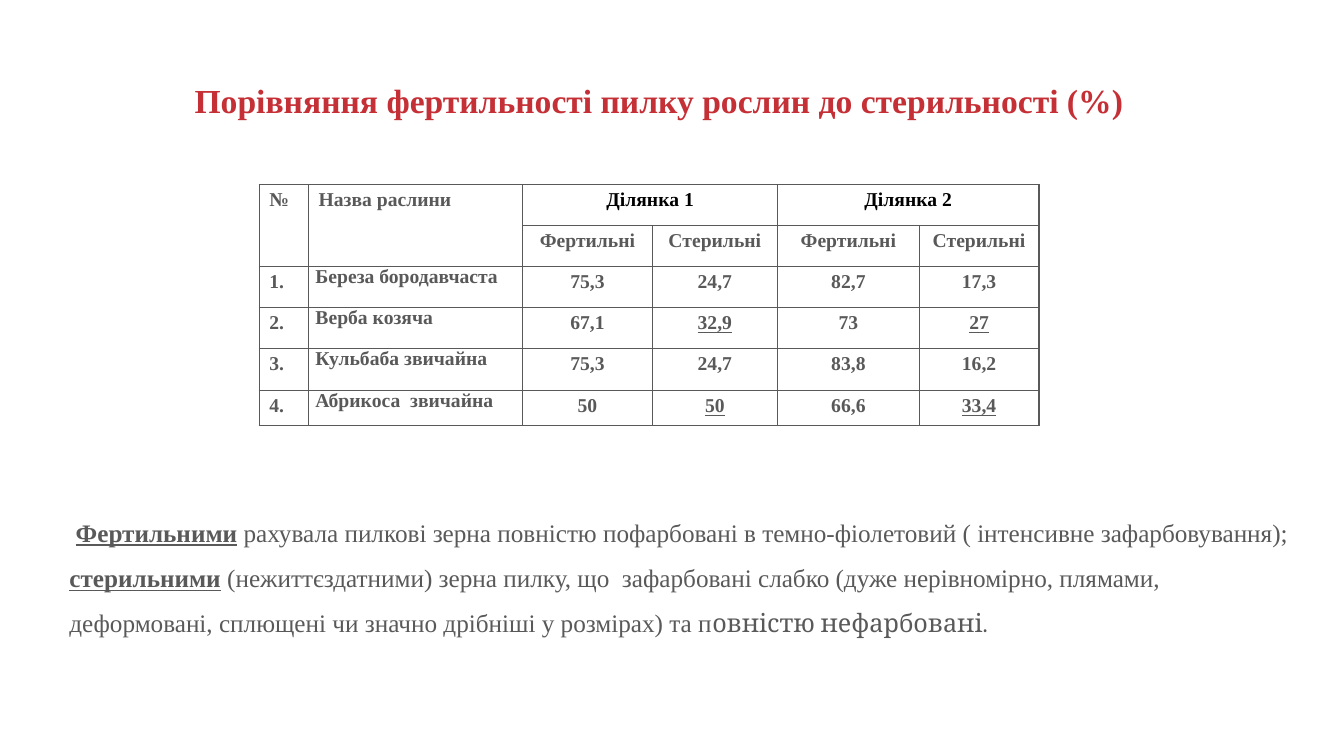
from lxml import etree
from pptx import Presentation
from pptx.dml.color import RGBColor
from pptx.enum.text import MSO_ANCHOR, MSO_AUTO_SIZE, PP_ALIGN
from pptx.oxml.ns import qn
from pptx.util import Pt

LEFT, CENTER = PP_ALIGN.LEFT, PP_ALIGN.CENTER
TOP = MSO_ANCHOR.TOP
NO_AUTOFIT = MSO_AUTO_SIZE.NONE

RED = RGBColor(0xC5, 0x30, 0x36)
GREY = RGBColor(0x59, 0x59, 0x59)
BLACK = RGBColor(0, 0, 0)
WHITE = RGBColor(0xFF, 0xFF, 0xFF)
SERIF = "Times New Roman"
TITLE_ONLY = 5

TITLE = "Порівняння фертильності пилку рослин до стерильності (%)"
COLUMN_WIDTHS = [35.2, 153.1, 92.4, 89.6, 101.2, 85.5]
ROW_HEIGHTS = [29.3, 29.3, 29.3, 29.3, 30, 25]
NAME_COLUMN = 1
FIRST_PLANT_ROW = 2
TABLE_ROWS = [
    ["№", "Назва раслини", "Ділянка 1", "", "Ділянка 2", ""],
    ["", "", "Фертильні", "Стерильні", "Фертильні", "Стерильні"],
    ["1.", "Береза бородавчаста", "75,3", "24,7", "82,7", "17,3"],
    ["2.", "Верба козяча", "67,1", "32,9", "73", "27"],
    ["3.", "Кульбаба звичайна", "75,3", "24,7", "83,8", "16,2"],
    ["4.", "Абрикоса  звичайна", "50", "50", "66,6", "33,4"],
]
MERGES = [((0, 0), (1, 0)), ((0, 1), (1, 1)), ((0, 2), (0, 3)), ((0, 4), (0, 5))]
UNDERLINED = {(3, 3), (3, 5), (5, 3), (5, 5)}

# Each run: text, emphasised (bold and underlined), font
NOTE = [
    [
        (" ", False, SERIF),
        ("Фертильними", True, SERIF),
        (" рахувала пилкові зерна повністю пофарбовані в темно-фіолетовий "
         "( інтенсивне зафарбовування);", False, SERIF),
    ],
    [
        ("стерильними", True, SERIF),
        (" (нежиттєздатними) зерна пилку, що  зафарбовані слабко (дуже нерівномірно, "
         "плямами, деформовані, сплющені чи значно дрібніші у розмірах) та п", False, SERIF),
        ("овністю нефарбовані.", False, "Cambria"),
    ],
]


def add_run(para, text, size, color=GREY, bold=False, underline=False, font=SERIF):
    span = para.add_run()
    span.text = text
    span.font.name = font
    span.font.size = Pt(size)
    span.font.color.rgb = color
    span.font.bold = bold
    span.font.underline = underline


def place_title(page):
    title = page.shapes.title
    title.left, title.top, title.width, title.height = Pt(131.8), Pt(53.3), Pt(704), Pt(36)
    frame = title.text_frame
    frame.word_wrap = True
    frame.auto_size = NO_AUTOFIT
    frame.vertical_anchor = TOP
    para = frame.paragraphs[0]
    para.alignment = LEFT
    para.line_spacing = 1.0
    para.space_before = Pt(0)
    add_run(para, TITLE, 24, RED, bold=True)


def add_borders(cell):
    properties = cell._tc.get_or_add_tcPr()
    for side in ("a:lnL", "a:lnR", "a:lnT", "a:lnB"):
        line = etree.SubElement(properties, qn(side), w=str(Pt(1)))
        fill = etree.SubElement(line, qn("a:solidFill"))
        etree.SubElement(fill, qn("a:srgbClr"), val=str(GREY))


def fill_cell(cell, row, column, text):
    add_borders(cell)
    cell.fill.solid()
    cell.fill.fore_color.rgb = WHITE
    if column == NAME_COLUMN and row >= FIRST_PLANT_ROW:
        cell.margin_left = cell.margin_right = Pt(5)
        cell.margin_top = cell.margin_bottom = Pt(0)
    if text:
        para = cell.text_frame.paragraphs[0]
        para.alignment = CENTER if column > NAME_COLUMN else LEFT
        color = BLACK if row == 0 and column > NAME_COLUMN else GREY
        add_run(para, text, 14, color, bold=True, underline=(row, column) in UNDERLINED)


def add_pollen_table(page):
    frame = page.shapes.add_table(
        len(ROW_HEIGHTS), len(COLUMN_WIDTHS), Pt(185.2), Pt(131.7),
        Pt(sum(COLUMN_WIDTHS)), Pt(sum(ROW_HEIGHTS)))
    table = frame.table
    table.first_row = table.horz_banding = False
    for column, width in zip(table.columns, COLUMN_WIDTHS):
        column.width = Pt(width)
    for row, height in zip(table.rows, ROW_HEIGHTS):
        row.height = Pt(height)
    for start, end in MERGES:
        table.cell(*start).merge(table.cell(*end))
    for row, texts in enumerate(TABLE_ROWS):
        for column, text in enumerate(texts):
            fill_cell(table.cell(row, column), row, column, text)


def add_note(page):
    box = page.shapes.add_textbox(Pt(42.5), Pt(355), Pt(891.4), Pt(105))
    frame = box.text_frame
    frame.word_wrap = True
    for index, spans in enumerate(NOTE):
        para = frame.add_paragraph() if index else frame.paragraphs[0]
        para.line_spacing = 1.5
        for text, emphasised, font in spans:
            add_run(para, text, 18, bold=emphasised, underline=emphasised, font=font)


def main():
    deck = Presentation()
    deck.slide_width, deck.slide_height = Pt(960), Pt(540)
    page = deck.slides.add_slide(deck.slide_layouts[TITLE_ONLY])
    place_title(page)
    add_pollen_table(page)
    add_note(page)
    deck.save("out.pptx")


if __name__ == "__main__":
    main()
